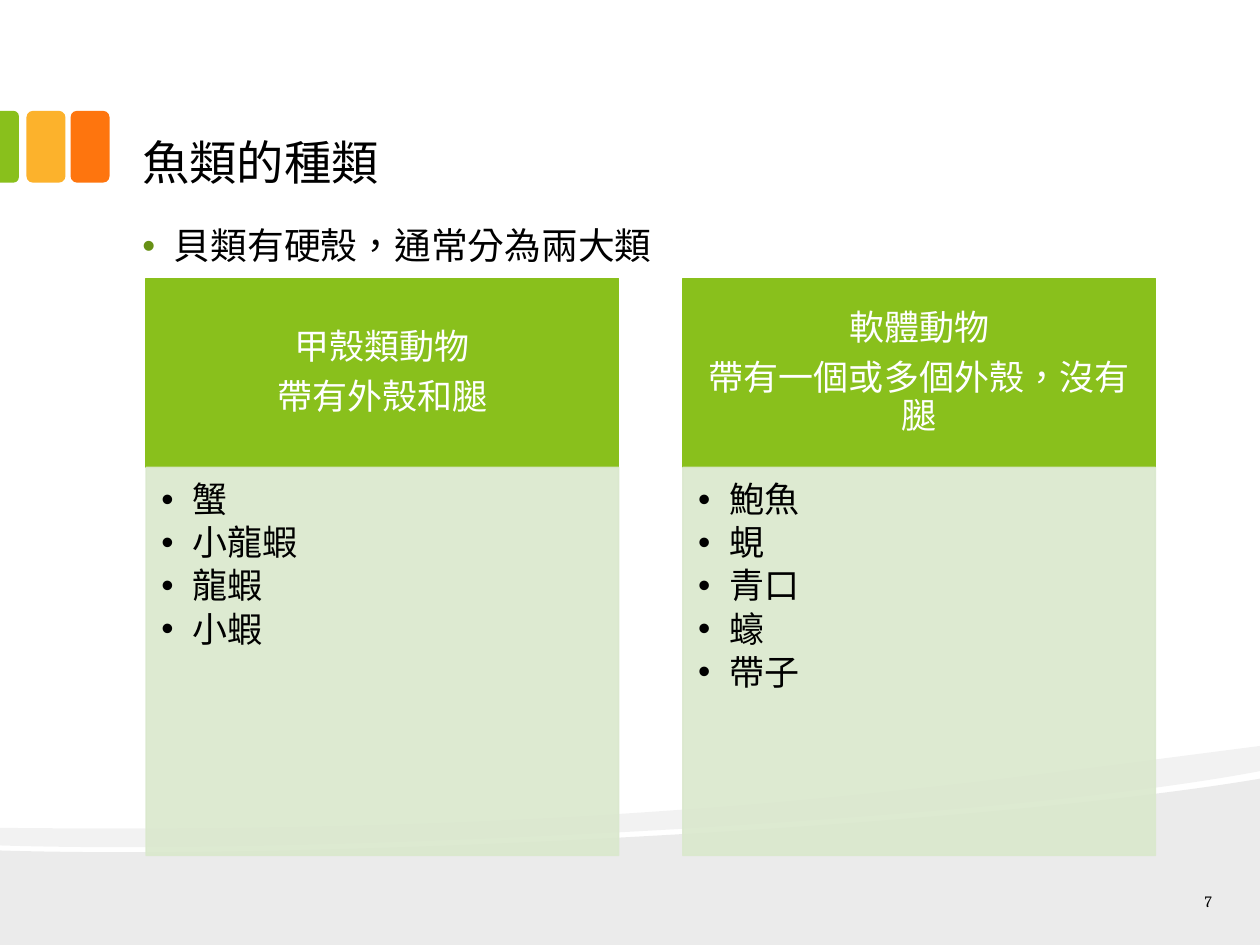
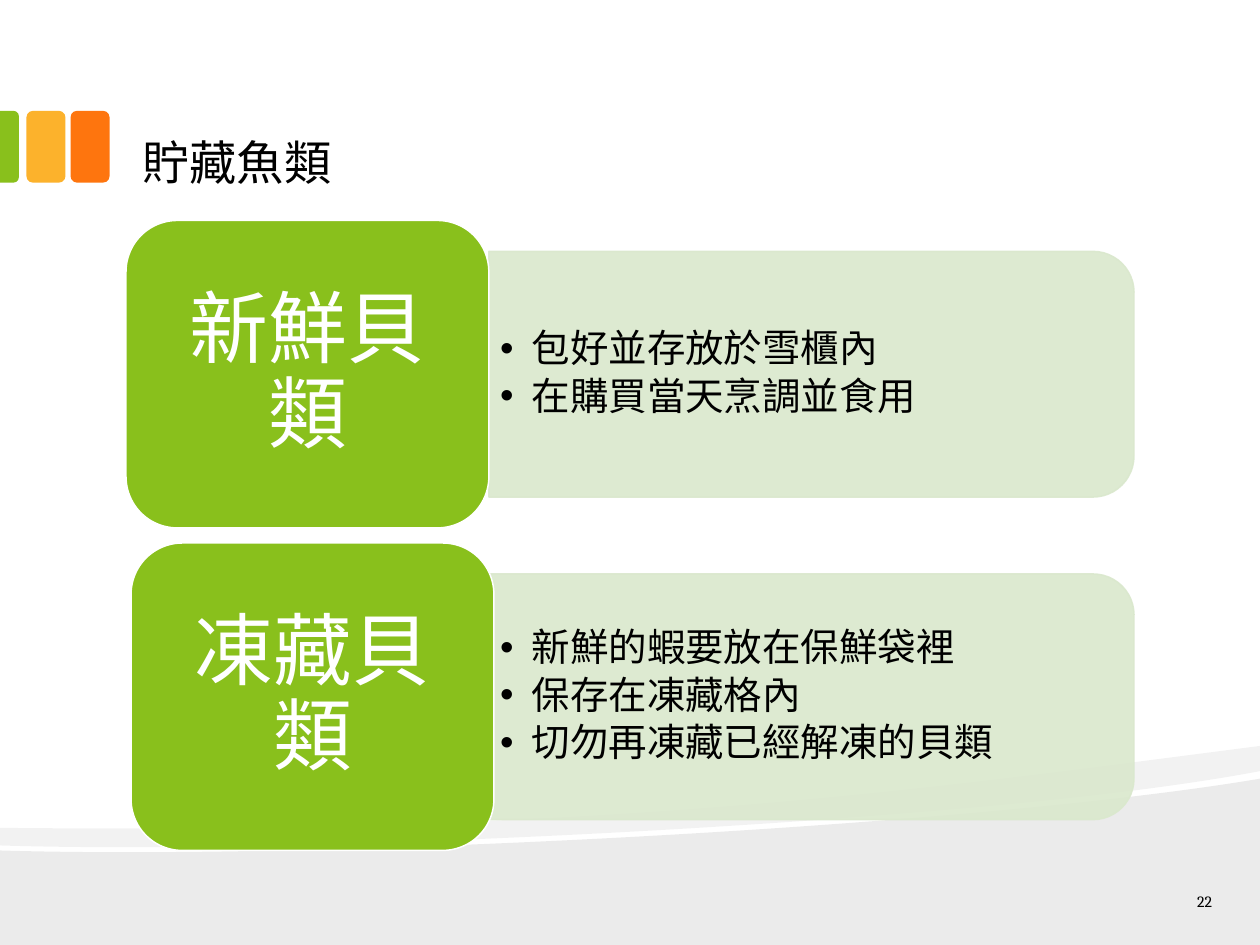
"""Build two slides on the kinds of shellfish and how to store them."""
from lxml.etree import SubElement as Sub
from pptx import Presentation
from pptx.dml.color import RGBColor
from pptx.enum.shapes import MSO_SHAPE as Shape
from pptx.enum.text import MSO_ANCHOR as Anchor, PP_ALIGN as Align
from pptx.oxml.ns import qn
from pptx.util import Inches, Pt

KINDS = {
    "title": "魚類的種類",
    "number": "7",
    "lead": "貝類有硬殼，通常分為兩大類",
    "columns": [
        (["甲殼類動物", "帶有外殼和腿"], ["蟹", "小龍蝦", "龍蝦", "小蝦"]),
        (["軟體動物", "帶有一個或多個外殼，沒有腿"],
         ["鮑魚", "蜆", "青口", "蠔", "帶子"]),
    ],
}
STORAGE = {
    "title": "貯藏魚類",
    "number": "22",
    "rows": [
        (1, "新鮮貝類", ["包好並存放於雪櫃內", "在購買當天烹調並食用"]),
        (1.04, "凍藏貝類",
         ["新鮮的蝦要放在保鮮袋裡", "保存在凍藏格內", "切勿再凍藏已經解凍的貝類"]),
    ],
}

FONT = "Cambria"
BLACK, WHITE = "000000", "FFFFFF"
GREEN, PALE, LEAF = "89C01C", "DAE8CD", "679015"
AMBER, ORANGE = "FCB22C", "FE750E"
PAD = (0.13, 0.07, 0.13, 0.07)

HILL = [[(10, 6.18)], [(10, 7.5)], [(0, 7.5)], [(0, 6.75)],
        [(2.64, 6.83), (7.82, 6.55), (10, 6.18)]]
RIDGE = [[(10, 5.92)], [(10, 6.12)],
         [(9.42, 6.23), (8.62, 6.33), (7.72, 6.41)],
         [(5.23, 6.63), (1.93, 6.77), (0, 6.71)],
         [(0, 6.57)],
         [(4.89, 6.62), (7.28, 6.27), (10, 5.92)]]


def rgb(code):
    return RGBColor.from_string(code)


def paint(shape, fill, line=None, alpha=100):
    shape.shadow.inherit = False
    shape.fill.solid()
    shape.fill.fore_color.rgb = rgb(fill)
    if line:
        shape.line.color.rgb = rgb(line)
        shape.line.width = Pt(0.85)
    else:
        shape.line.fill.background()
    if alpha < 100:
        for tone in shape._element.spPr.iter(qn("a:srgbClr")):
            Sub(tone, qn("a:alpha"), val=str(alpha * 1000))
    return shape


def block(slide, kind, box, fill, line=None, alpha=100):
    shape = slide.shapes.add_shape(kind, *map(Inches, box))
    return paint(shape, fill, line, alpha)


def turned(slide, box, fill, line=None, alpha=100):
    left, top, wide, high = box
    frame = (left + (wide - high) / 2, top + (high - wide) / 2, high, wide)
    shape = block(slide, Shape.ROUND_2_SAME_RECTANGLE, frame, fill, line, alpha)
    shape.rotation = 90
    return shape


def bullet(para, color):
    props = para._p.get_or_add_pPr()
    props.set("marL", str(Inches(0.25)))
    props.set("indent", str(-Inches(0.25)))
    Sub(Sub(props, qn("a:buClr")), qn("a:srgbClr"), val=color)
    Sub(props, qn("a:buFont"), typeface="Arial")
    Sub(props, qn("a:buChar"), char="•")


def write(shape, lines, size, color=BLACK, align=Align.LEFT, anchor=Anchor.TOP,
          pad=PAD, space=None, after=0, dot=None):
    frame = shape.text_frame
    frame.word_wrap = True
    frame.vertical_anchor = anchor
    (frame.margin_left, frame.margin_top,
     frame.margin_right, frame.margin_bottom) = map(Inches, pad)
    for i, line in enumerate(lines):
        para = frame.add_paragraph() if i else frame.paragraphs[0]
        para.text = line
        para.alignment = align
        if dot:
            bullet(para, dot)
        if space:
            para.line_spacing = space
            para.space_after = Pt(size * after)
        font = para.font
        font.name, font.size, font.color.rgb = FONT, Pt(size), rgb(color)
        para._p.pPr.find(qn("a:defRPr")).set("lang", "zh-TW")


def label(slide, box, lines, size, **style):
    write(slide.shapes.add_textbox(*map(Inches, box)), lines, size, **style)


def wave(slide, parts, alpha):
    dots = [tuple(map(Inches, dot)) for part in parts for dot in part]
    form = slide.shapes.build_freeform(*dots[0])
    form.add_line_segments(dots[1:], close=True)
    shape = paint(form.convert_to_shape(), BLACK, alpha=alpha)
    lines = shape._element.spPr.iter(qn("a:lnTo"))
    steps = iter(list(lines))
    for part in parts[1:]:
        group = [next(steps) for _ in part]
        if len(group) == 3:
            first, *rest = group
            first.tag = qn("a:cubicBezTo")
            for step in rest:
                first.append(step[0])
                step.getparent().remove(step)


def start(deck, page):
    slide = deck.slides.add_slide(deck.slide_layouts[6])
    wave(slide, HILL, 8)
    wave(slide, RIDGE, 5)
    for left, fill in ((0.56, ORANGE), (0.21, AMBER)):
        block(slide, Shape.ROUNDED_RECTANGLE, (left, 0.88, 0.31, 0.57), fill)
    tab = turned(slide, (0, 0.88, 0.15, 0.57), GREEN)
    tab.adjustments[0] = 0.29
    label(slide, (1, 0.16, 8, 1.42), [page["title"]], 27, anchor=Anchor.BOTTOM)
    return slide


def finish(slide, page):
    label(slide, (9.08, 7.05, 0.67, 0.2), [page["number"]], 9,
          align=Align.RIGHT, anchor=Anchor.MIDDLE)


def kinds(deck):
    slide = start(deck, KINDS)
    label(slide, (1, 1.74, 8, 5), [KINDS["lead"]], 21, space=0.9, dot=LEAF)
    top, wide, head, body = 2.21, 3.75, 1.5, 3.08
    for i, (names, items) in enumerate(KINDS["columns"]):
        left = 1.16 + i * 4.26
        cap = block(slide, Shape.RECTANGLE, (left, top, wide, head), GREEN, GREEN)
        write(cap, names, 20, WHITE, Align.CENTER, Anchor.MIDDLE,
              (0.16, 0.09, 0.16, 0.09), 0.9, 0.35)
        panel = block(slide, Shape.RECTANGLE, (left, top + head, wide, body),
                      PALE, PALE, 90)
        write(panel, items, 20, pad=(0.12, 0.12, 0.16, 0.17),
              space=0.9, after=0.15, dot=BLACK)
    finish(slide, KINDS)


def storage(deck):
    slide = start(deck, STORAGE)
    wide, high, deep = 2.88, 2.44, 1.95
    for i, (left, name, items) in enumerate(STORAGE["rows"]):
        top = 1.75 + i * 2.56
        mid = top + high / 2
        turned(slide, (3.88, mid - deep / 2, 5.12, deep), PALE, PALE, 90)
        label(slide, (3.88, mid - 0.88, 5.02, 1.76), items, 22,
              anchor=Anchor.MIDDLE, pad=(0.09, 0.05, 0.09, 0.05),
              space=0.9, after=0.15, dot=BLACK)
        tile = block(slide, Shape.ROUNDED_RECTANGLE, (left, top, wide, high),
                     GREEN, WHITE)
        write(tile, [name], 45, WHITE, Align.CENTER, Anchor.MIDDLE,
              (0.19, 0.09, 0.19, 0.09), 0.9, 0.35)
    finish(slide, STORAGE)


def main():
    deck = Presentation()
    deck.slide_width, deck.slide_height = Inches(10), Inches(7.5)
    kinds(deck)
    storage(deck)
    deck.save("out.pptx")


if __name__ == "__main__":
    main()
